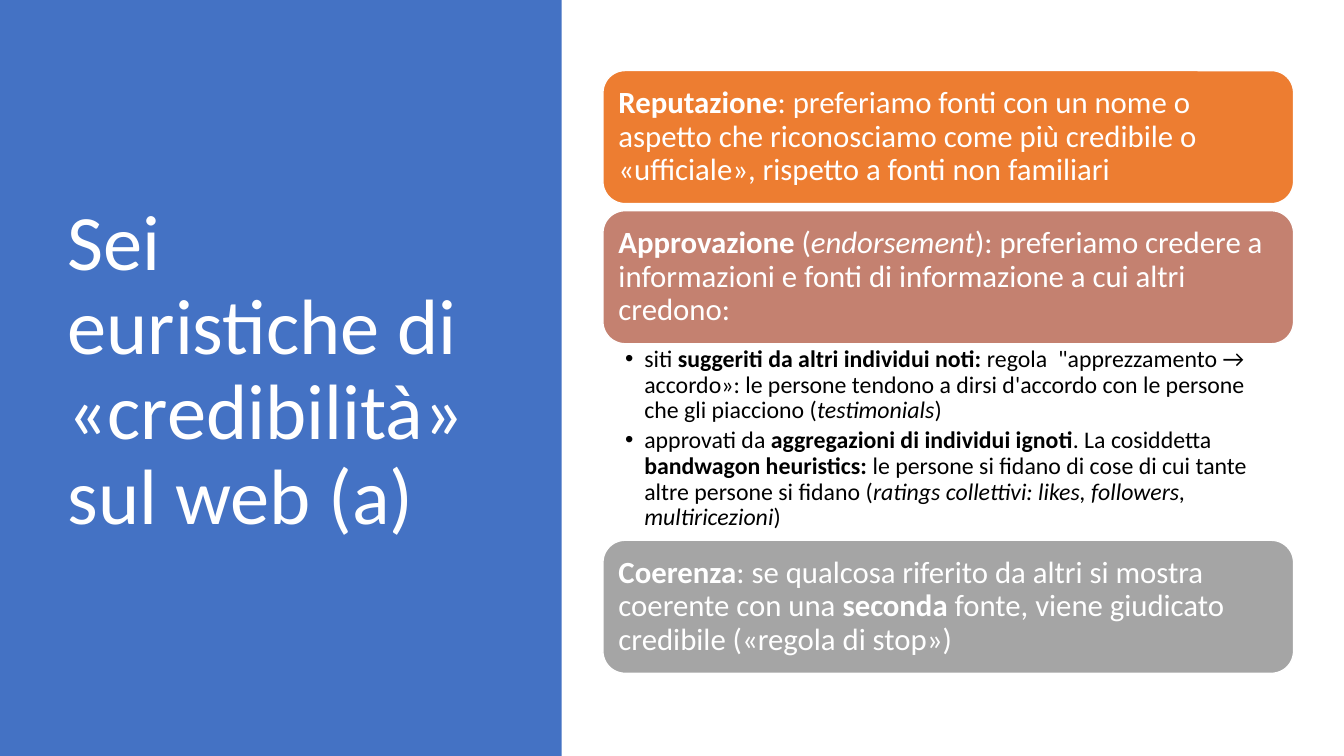
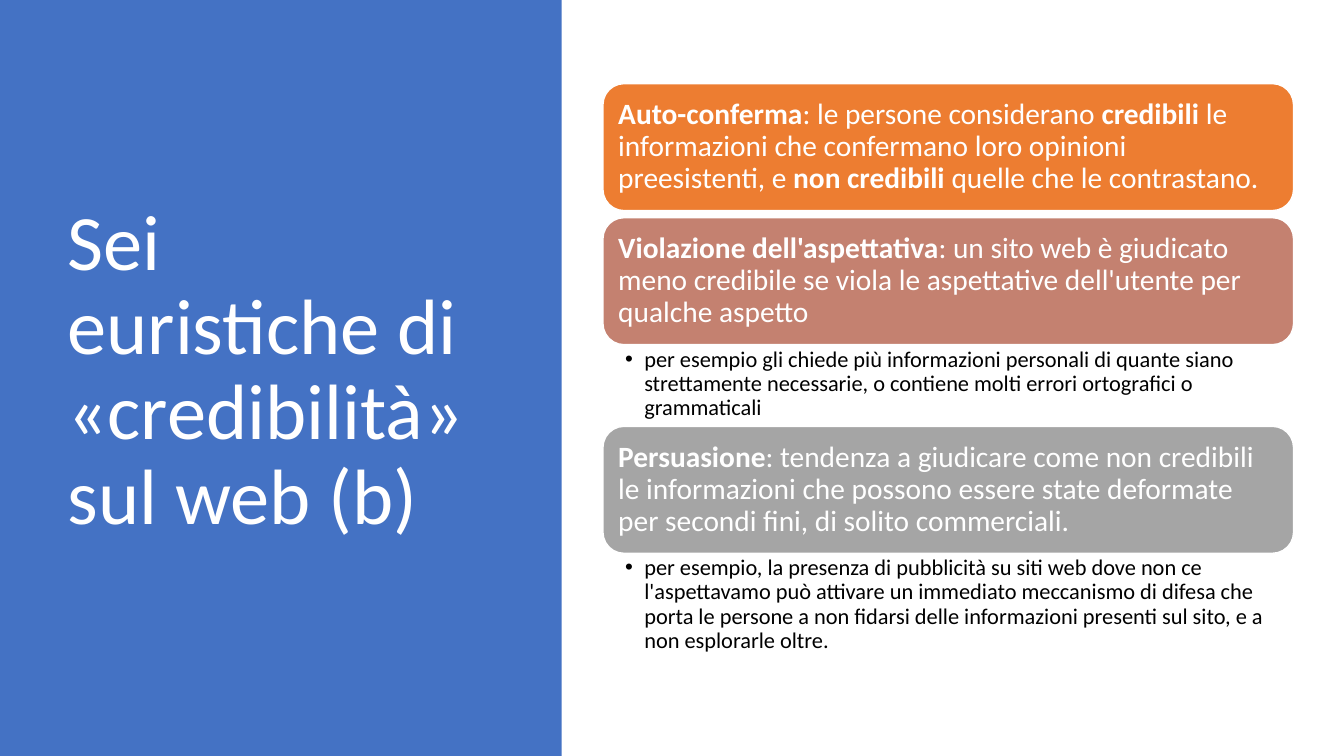
from dataclasses import dataclass

from lxml import etree
from pptx import Presentation
from pptx.dml.color import RGBColor
from pptx.enum import shapes, text
from pptx.oxml import ns
from pptx.util import Inches, Pt


@dataclass(frozen=True)
class Theme:
    font: str = "Calibri"
    panel: str = "4472C4"
    cards: tuple = ("ED7D31", "C48170", "A5A5A5")
    light: str = "FFFFFF"
    dark: str = "000000"
    title_size: int = 56
    line_spacing: float = 0.9
    bullet_gap: int = 3


@dataclass(frozen=True)
class Page:
    title: str
    top: float
    card_height: float
    card_size: int
    detail_size: int
    items: tuple  # (card text, detail paragraphs, detail height)


THEME = Theme()
SLIDE_WIDTH, SLIDE_HEIGHT = 13.33, 7.5
PANEL_WIDTH = 5.57
CARD_LEFT, CARD_WIDTH, CARD_GAP = 5.98, 6.85, 0.07
BULLET_INDENT = 0.19

# In the texts, *...* is bold and _..._ is italic.
PAGES = (
    Page("Sei euristiche di «credibilità» sul web (a)", 0.7, 1.32, 22, 17, (
        ("*Reputazione*: preferiamo fonti con un nome o aspetto che riconosciamo "
         "come più credibile o «ufficiale», rispetto a fonti non familiari", (), 0),
        ("*Approvazione* (_endorsement_): preferiamo credere a informazioni e fonti "
         "di informazione a cui altri credono:", (
             "siti *suggeriti da altri individui noti: *regola  \"apprezzamento → "
             "accordo»: le persone tendono a dirsi d'accordo con le persone che gli "
             "piacciono (_testimonials_)",
             "approvati da *aggregazioni di individui ignoti*. La cosiddetta "
             "*bandwagon heuristics: *le persone si fidano di cose di cui tante altre "
             "persone si fidano (_ratings collettivi: likes, followers, "
             "multiricezioni_)"), 1.95),
        ("*Coerenza*: se qualcosa riferito da altri si mostra coerente con una "
         "*seconda* fonte, viene giudicato credibile («regola di stop»)", (), 0),
    )),
    Page("Sei euristiche di «credibilità» sul web (b)", 0.83, 1.26, 21, 16, (
        ("*Auto-conferma*: le persone considerano *credibili* le informazioni che "
         "confermano loro opinioni preesistenti, e *non credibili* quelle che le "
         "contrastano.", (), 0),
        ("*Violazione dell'aspettativa*: un sito web è giudicato meno credibile se "
         "viola le aspettative dell'utente per qualche aspetto", (
             "per esempio gli chiede più informazioni personali di quante siano "
             "strettamente necessarie, o contiene molti errori ortografici o "
             "grammaticali",), 0.81),
        ("*Persuasione*: tendenza a giudicare come non credibili le informazioni che "
         "possono essere state deformate per secondi fini, di solito commerciali.", (
             "per esempio, la presenza di pubblicità su siti web dove non ce "
             "l'aspettavamo può attivare un immediato meccanismo di difesa che porta "
             "le persone a non fidarsi delle informazioni presenti sul sito, e a non "
             "esplorarle oltre.",), 1.05),
    )),
)


def set_all(target, **values):
    for name, value in values.items():
        setattr(target, name, value)


def set_frame(frame, anchor, left, top, right, bottom):
    set_all(frame, word_wrap=True, auto_size=text.MSO_AUTO_SIZE.NONE,
            vertical_anchor=anchor,
            margin_left=Inches(left), margin_top=Inches(top),
            margin_right=Inches(right), margin_bottom=Inches(bottom))


def write(para, marked, size, color):
    """Fill a paragraph, turning *bold* and _italic_ marks into spans."""
    set_all(para, alignment=text.PP_ALIGN.LEFT, line_spacing=THEME.line_spacing)
    for bold, piece in enumerate(marked.split("*")):
        for italic, words in enumerate(piece.split("_")):
            if words:
                span = para.add_run()
                span.text = words
                set_all(span.font, name=THEME.font, size=Pt(size),
                        bold=bool(bold % 2), italic=bool(italic % 2))
                span.font.color.rgb = RGBColor.from_string(color)


def add_bullet(para):
    props = para._p.get_or_add_pPr()
    props.set("marL", str(Inches(BULLET_INDENT)))
    props.set("indent", str(-Inches(BULLET_INDENT)))
    etree.SubElement(props, ns.qn("a:buFont")).set("typeface", "Arial")
    etree.SubElement(props, ns.qn("a:buChar")).set("char", "•")


def add_block(slide, preset, left, top, width, height, fill):
    block = slide.shapes.add_shape(
        preset, Inches(left), Inches(top), Inches(width), Inches(height))
    block.shadow.inherit = False
    block.fill.solid()
    block.fill.fore_color.rgb = RGBColor.from_string(fill)
    block.line.fill.background()
    return block


def add_title_panel(slide, title):
    panel = add_block(slide, shapes.MSO_SHAPE.RECTANGLE,
                      0, 0, PANEL_WIDTH, SLIDE_HEIGHT, THEME.panel)
    box = slide.shapes.title
    box._element.addprevious(panel._element)
    set_all(box, left=Inches(0.57), top=Inches(0.68),
            width=Inches(4.16), height=Inches(6.02))
    set_frame(box.text_frame, text.MSO_ANCHOR.MIDDLE, 0.1, 0.05, 0.1, 0.05)
    write(box.text_frame.paragraphs[0], title, THEME.title_size, THEME.light)


def add_card(slide, top, height, fill, marked, size):
    card = add_block(slide, shapes.MSO_SHAPE.ROUNDED_RECTANGLE,
                     CARD_LEFT, top, CARD_WIDTH, height, fill)
    card.line.color.rgb = RGBColor.from_string(THEME.light)
    card.line.width = Pt(1)
    set_frame(card.text_frame, text.MSO_ANCHOR.MIDDLE, 0.09, 0.09, 0.09, 0.09)
    write(card.text_frame.paragraphs[0], marked, size, THEME.light)


def add_details(slide, top, height, details, size):
    box = slide.shapes.add_textbox(
        Inches(CARD_LEFT), Inches(top), Inches(CARD_WIDTH), Inches(height))
    frame = box.text_frame
    set_frame(frame, text.MSO_ANCHOR.TOP, 0.22, 0.03, 0.17, 0.03)
    for index, marked in enumerate(details):
        para = frame.add_paragraph() if index else frame.paragraphs[0]
        add_bullet(para)
        para.space_after = Pt(THEME.bullet_gap)
        write(para, marked, size, THEME.dark)


def add_page(deck, page):
    """Stack the cards downwards; details follow their card without a gap."""
    slide = deck.slides.add_slide(deck.slide_layouts.get_by_name("Title Only"))
    add_title_panel(slide, page.title)
    top = page.top
    for fill, (marked, details, detail_height) in zip(THEME.cards, page.items):
        add_card(slide, top, page.card_height, fill, marked, page.card_size)
        top += page.card_height
        if details:
            add_details(slide, top, detail_height, details, page.detail_size)
        top += detail_height or CARD_GAP


def main():
    deck = Presentation()
    set_all(deck, slide_width=Inches(SLIDE_WIDTH), slide_height=Inches(SLIDE_HEIGHT))
    for page in PAGES:
        add_page(deck, page)
    deck.save("out.pptx")


if __name__ == "__main__":
    main()
